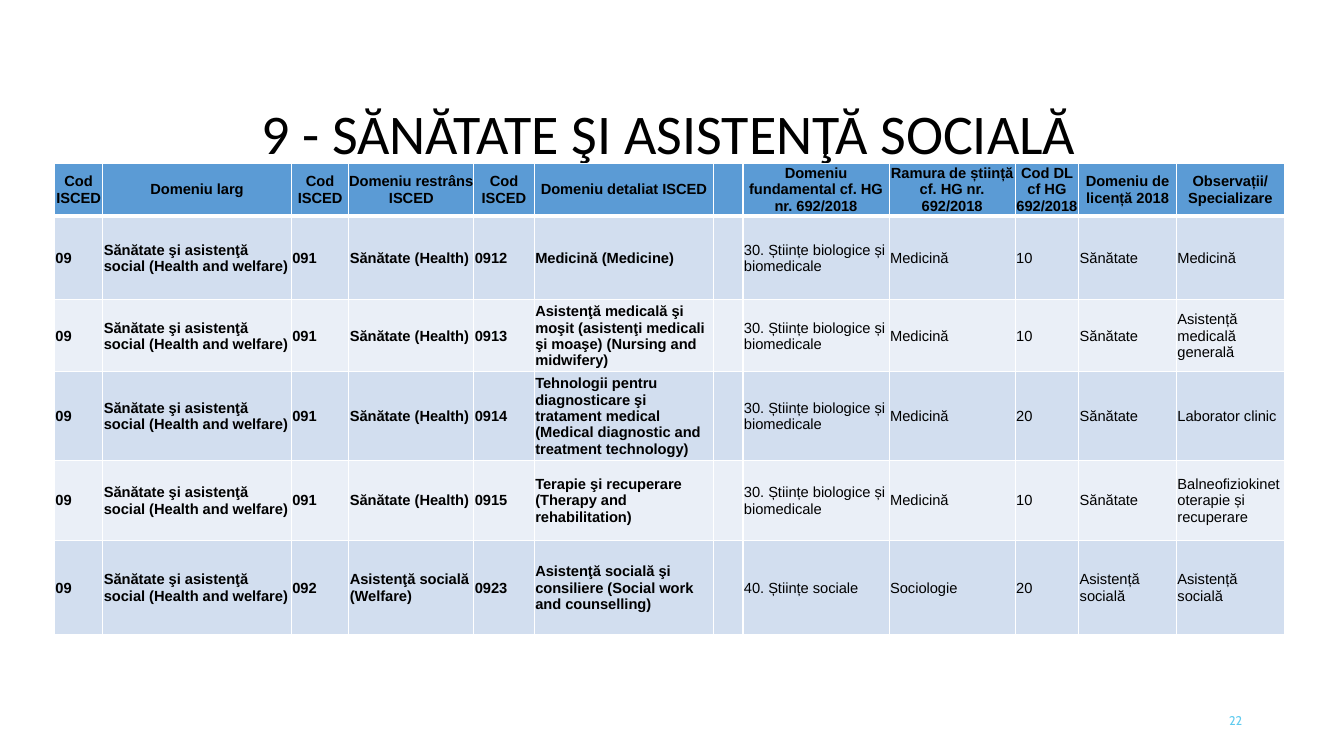
from lxml import etree
from pptx import Presentation
from pptx.dml.color import RGBColor
from pptx.enum.text import MSO_ANCHOR, PP_ALIGN
from pptx.oxml.ns import qn
from pptx.util import Pt

PX = 9144
MIDDLE = MSO_ANCHOR.MIDDLE
LEFT, CENTER, RIGHT = PP_ALIGN.LEFT, PP_ALIGN.CENTER, PP_ALIGN.RIGHT
BLACK = RGBColor(0x00, 0x00, 0x00)
WHITE = RGBColor(0xFF, 0xFF, 0xFF)
CYAN = RGBColor(0x5F, 0xCB, 0xEF)
BLUE = RGBColor(0x5B, 0x9B, 0xD5)
BANDS = (RGBColor(0xEA, 0xEF, 0xF7), RGBColor(0xD2, 0xDE, 0xEF))

COLS = (48, 187, 57, 124, 60, 178, 29, 145, 125, 63, 97, 107)
ROWS = (49, 83, 69, 71, 79, 94)
BOLD_COLS = 6
BROAD = "Sănătate şi asistenţă social (Health and welfare)"
HEALTH = "Sănătate (Health)"
BIO = "30. Științe biologice și biomedicale"
CELLS = (
    ("Cod ISCED", "Domeniu larg", "Cod ISCED", "Domeniu restrâns ISCED",
     "Cod ISCED", "Domeniu detaliat ISCED", "",
     "Domeniu fundamental cf. HG nr. 692/2018",
     "Ramura de știință cf. HG nr. 692/2018", "Cod DL cf HG 692/2018",
     "Domeniu de licență 2018", "Observații/ Specializare"),
    ("09", BROAD, "091", HEALTH, "0912", "Medicină (Medicine)", "",
     BIO, "Medicină", "10", "Sănătate", "Medicină"),
    ("09", BROAD, "091", HEALTH, "0913",
     "Asistenţă medicală şi moşit (asistenţi medicali şi moaşe) "
     "(Nursing and midwifery)", "",
     BIO, "Medicină", "10", "Sănătate", "Asistență medicală generală"),
    ("09", BROAD, "091", HEALTH, "0914",
     "Tehnologii pentru diagnosticare şi tratament medical "
     "(Medical diagnostic and treatment technology)", "",
     BIO, "Medicină", "20", "Sănătate", "Laborator clinic"),
    ("09", BROAD, "091", HEALTH, "0915",
     "Terapie şi recuperare (Therapy and rehabilitation)", "",
     BIO, "Medicină", "10", "Sănătate",
     "Balneofiziokinetoterapie și recuperare"),
    ("09", BROAD, "092", "Asistenţă socială (Welfare)", "0923",
     "Asistenţă socială şi consiliere (Social work and counselling)", "",
     "40. Științe sociale", "Sociologie", "20", "Asistență socială",
     "Asistență socială"),
)


def set_font(para, name, size, color, bold=False):
    """Style a whole paragraph."""
    font = para.font
    font.name, font.size, font.bold = name, Pt(size), bold
    font.color.rgb = color


def add_label(slide, box, text, align, name, size, color):
    """Add a one-line text box and return its paragraph."""
    frame = slide.shapes.add_textbox(*(n * PX for n in box)).text_frame
    frame.word_wrap = True
    frame.vertical_anchor = MIDDLE
    para = frame.paragraphs[0]
    para.text, para.alignment = text, align
    set_font(para, name, size, color)
    return para


def add_edge(cell, side, width):
    """Add a white border to one side of a cell."""
    props = cell._tc.get_or_add_tcPr()
    line = etree.SubElement(props, qn("a:ln" + side), w=str(Pt(width)))
    fill = etree.SubElement(line, qn("a:solidFill"))
    etree.SubElement(fill, qn("a:srgbClr"), val=str(WHITE))


def fill_cell(cell, text, row, col):
    """Set the borders, fill and text of a cell by its place."""
    head = row == 0
    for side in "LRTB":
        thick = (row, side) in ((0, "B"), (1, "T"))
        add_edge(cell, side, 3 if thick else 1)
    cell.fill.solid()
    cell.fill.fore_color.rgb = BLUE if head else BANDS[row % 2]
    cell.vertical_anchor = MIDDLE
    cell.margin_left = cell.margin_right = cell.margin_top = 0 if head else PX
    cell.margin_bottom = 0
    para = cell.text_frame.paragraphs[0]
    para.text, para.alignment = text, CENTER if head else LEFT
    set_font(para, "Arial", 10.5, BLACK, head or col < BOLD_COLS)


def add_grid(slide, left, top):
    """Add the table of study fields."""
    table = slide.shapes.add_table(
        len(ROWS), len(COLS), left * PX, top * PX,
        sum(COLS) * PX, sum(ROWS) * PX).table
    for col, width in zip(table.columns, COLS):
        col.width = width * PX
    for row, height in zip(table.rows, ROWS):
        row.height = height * PX
    for row, texts in enumerate(CELLS):
        for col, text in enumerate(texts):
            fill_cell(table.cell(row, col), text, row, col)


def main():
    """Build and save the slide."""
    deck = Presentation()
    deck.slide_width, deck.slide_height = 1333 * PX, 750 * PX
    slide = deck.slides.add_slide(deck.slide_layouts[6])
    add_label(slide, (942, 695, 300, 40), "22", RIGHT, "Cabin", 9, CYAN)
    title = add_label(slide, (5, 99, 1316, 72),
                      "9 - SĂNĂTATE ŞI ASISTENŢĂ SOCIALĂ",
                      CENTER, "Calibri", 40, BLACK)
    title.line_spacing = 0.9
    add_grid(slide, 54, 162)
    deck.save("out.pptx")


if __name__ == "__main__":
    main()
